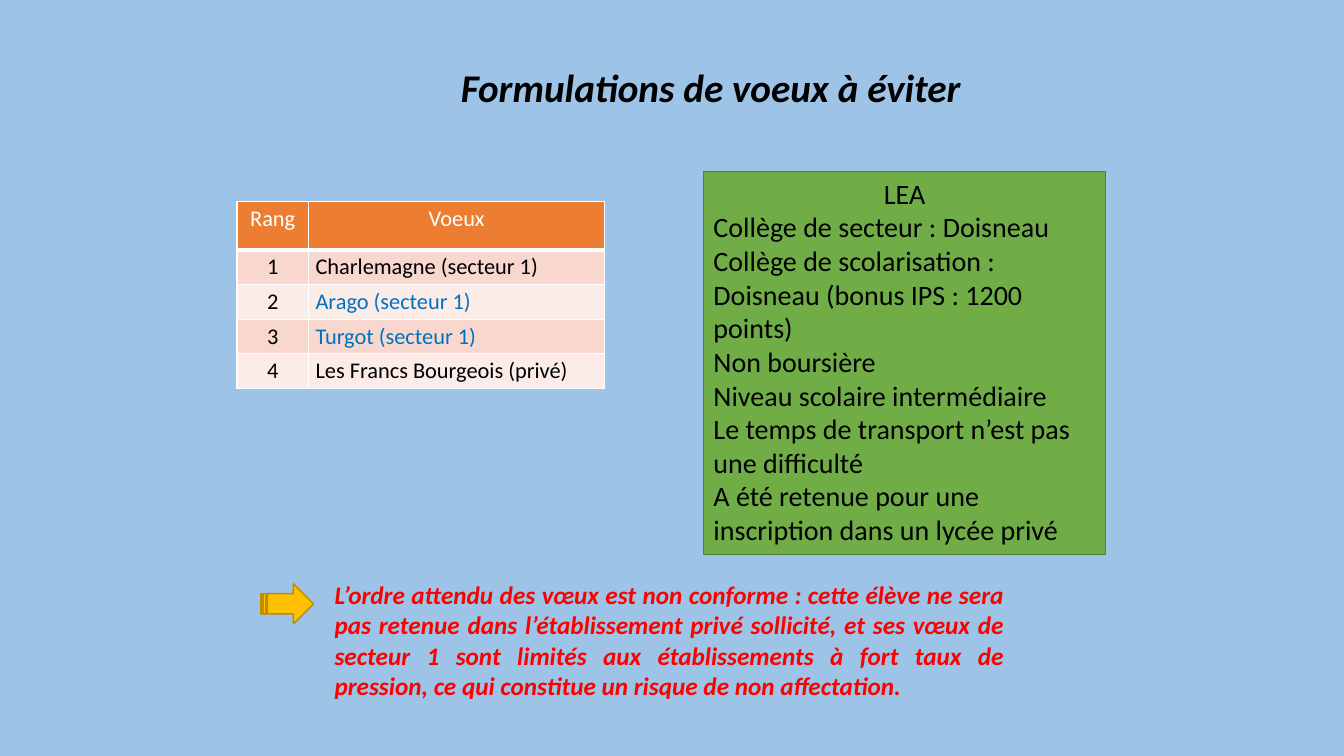
from dataclasses import dataclass

from pptx import Presentation
from pptx.dml.color import RGBColor
from pptx.enum.shapes import MSO_SHAPE as Preset
from pptx.enum.text import MSO_ANCHOR as Anchor, PP_ALIGN as Align
from pptx.oxml import parse_xml
from pptx.oxml.ns import nsdecls
from pptx.util import Inches, Pt


@dataclass(frozen=True)
class Theme:
    font: str = "Calibri"
    background: str = "9DC3E6"
    ink: str = "000000"
    light: str = "FFFFFF"
    warning: str = "FF0000"
    highlight: str = "0070C0"
    profile: str = "70AD47"
    profile_edge: str = "538035"
    arrow: str = "FFC000"
    arrow_edge: str = "BD8E00"
    header: str = "ED7D31"
    bands: tuple = ("F8D7CE", "FCECE8")
    title_size: int = 28
    profile_size: int = 20
    note_size: int = 18
    table_size: int = 16


class Page:
    def __init__(self, deck, theme):
        self.theme = theme
        self.width, self.height = deck.slide_width, deck.slide_height
        self.slide = deck.slides.add_slide(deck.slide_layouts[6])
        self.paint(self.slide.background.fill, theme.background)

    def across(self, percent):
        return round(self.width * percent / 100)

    def down(self, percent):
        return round(self.height * percent / 100)

    def place(self, left, top, width, height):
        return self.across(left), self.down(top), self.across(width), self.down(height)

    def paint(self, fill, color):
        fill.solid()
        fill.fore_color.rgb = RGBColor.from_string(color)

    def style(self, paragraph, size, color, align=Align.LEFT, strong=False):
        paragraph.alignment = align
        for run in paragraph.runs:
            run.font.name = self.theme.font
            run.font.size = Pt(size)
            run.font.bold = run.font.italic = strong
            run.font.color.rgb = RGBColor.from_string(color)

    def text(self, area, words, size, color, align, anchor=Anchor.TOP, spacing=1.0):
        frame = self.slide.shapes.add_textbox(*self.place(*area)).text_frame
        frame.word_wrap = True
        frame.vertical_anchor = anchor
        frame.text = words
        frame.paragraphs[0].line_spacing = spacing
        self.style(frame.paragraphs[0], size, color, align, strong=True)

    def shape(self, preset, area, color, edge):
        shape = self.slide.shapes.add_shape(preset, *self.place(*area))
        shape.shadow.inherit = False
        self.paint(shape.fill, color)
        self.paint(shape.line.fill, edge)
        shape.line.width = Pt(1)
        return shape

    def card(self, area, heading, facts):
        theme = self.theme
        frame = self.shape(Preset.RECTANGLE, area, theme.profile, theme.profile_edge).text_frame
        frame.word_wrap = True
        frame.vertical_anchor = Anchor.TOP
        frame.text = "\n".join([heading, *facts])
        for paragraph in frame.paragraphs:
            self.style(paragraph, theme.profile_size, theme.ink)
        frame.paragraphs[0].alignment = Align.CENTER

    def borders(self, cell, bottom):
        properties = cell._tc.get_or_add_tcPr()
        sides = {"lnL": 1, "lnR": 1, "lnT": 1, "lnB": bottom}
        for position, (side, points) in enumerate(sides.items()):
            properties.insert(position, parse_xml(
                f'<a:{side} {nsdecls("a")} w="{Pt(points)}"><a:solidFill>'
                f'<a:srgbClr val="{self.theme.light}"/></a:solidFill></a:{side}>'))

    def cell(self, cell, words, color, fill, align, bottom=1):
        cell.text = words
        cell.margin_left = cell.margin_right = Inches(0.07)
        cell.margin_top = cell.margin_bottom = Pt(2.6)
        self.paint(cell.fill, fill)
        self.borders(cell, bottom)
        self.style(cell.text_frame.paragraphs[0], self.theme.table_size, color, align)

    def ranking(self, left, top, columns, header_height, row_height, headings, wishes):
        theme = self.theme
        heights = [header_height] + [row_height] * len(wishes)
        area = self.place(left, top, sum(columns), sum(heights))
        table = self.slide.shapes.add_table(len(heights), len(columns), *area).table
        for column, width in zip(table.columns, columns):
            column.width = self.across(width)
        for row, height in zip(table.rows, heights):
            row.height = self.down(height)
        for index, heading in enumerate(headings):
            self.cell(table.cell(0, index), heading, theme.light, theme.header, Align.CENTER, bottom=3)
        for rank, (wish, color) in enumerate(wishes, 1):
            band = theme.bands[(rank - 1) % 2]
            self.cell(table.cell(rank, 0), str(rank), theme.ink, band, Align.CENTER)
            self.cell(table.cell(rank, 1), wish, color, band, Align.LEFT)


def main():
    deck = Presentation()
    deck.slide_width, deck.slide_height = Inches(13.33), Inches(7.5)
    theme = Theme()
    page = Page(deck, theme)

    page.text((23.4, 7.47, 58.95, 8.93), "Formulations de voeux à éviter",
              theme.title_size, theme.ink, Align.CENTER, Anchor.MIDDLE, 0.9)
    page.card((52.35, 22.67, 29.93, 50.67), "LEA", [
        "Collège de secteur : Doisneau",
        "Collège de scolarisation : Doisneau (bonus IPS : 1200 points)",
        "Non boursière",
        "Niveau scolaire intermédiaire",
        "Le temps de transport n’est pas une difficulté",
        "A été retenue pour une inscription dans un lycée privé",
    ])
    page.ranking(17.63, 26.67, (5.33, 22.05), 6.4, 4.58, ("Rang", "Voeux"), [
        ("Charlemagne (secteur 1)", theme.ink),
        ("Arago (secteur 1)", theme.highlight),
        ("Turgot (secteur 1)", theme.highlight),
        ("Les Francs Bourgeois (privé)", theme.ink),
    ])
    page.shape(Preset.STRIPED_RIGHT_ARROW, (19.43, 77.2, 3.9, 5.33), theme.arrow, theme.arrow_edge)
    page.text((24.15, 76, 51.3, 17.47),
              "L’ordre attendu des vœux est non conforme : cette élève ne sera pas retenue "
              "dans l’établissement privé sollicité, et ses vœux de secteur 1 sont limités "
              "aux établissements à fort taux de pression, ce qui constitue un risque de "
              "non affectation.",
              theme.note_size, theme.warning, Align.JUSTIFY)
    deck.save("out.pptx")


if __name__ == "__main__":
    main()
